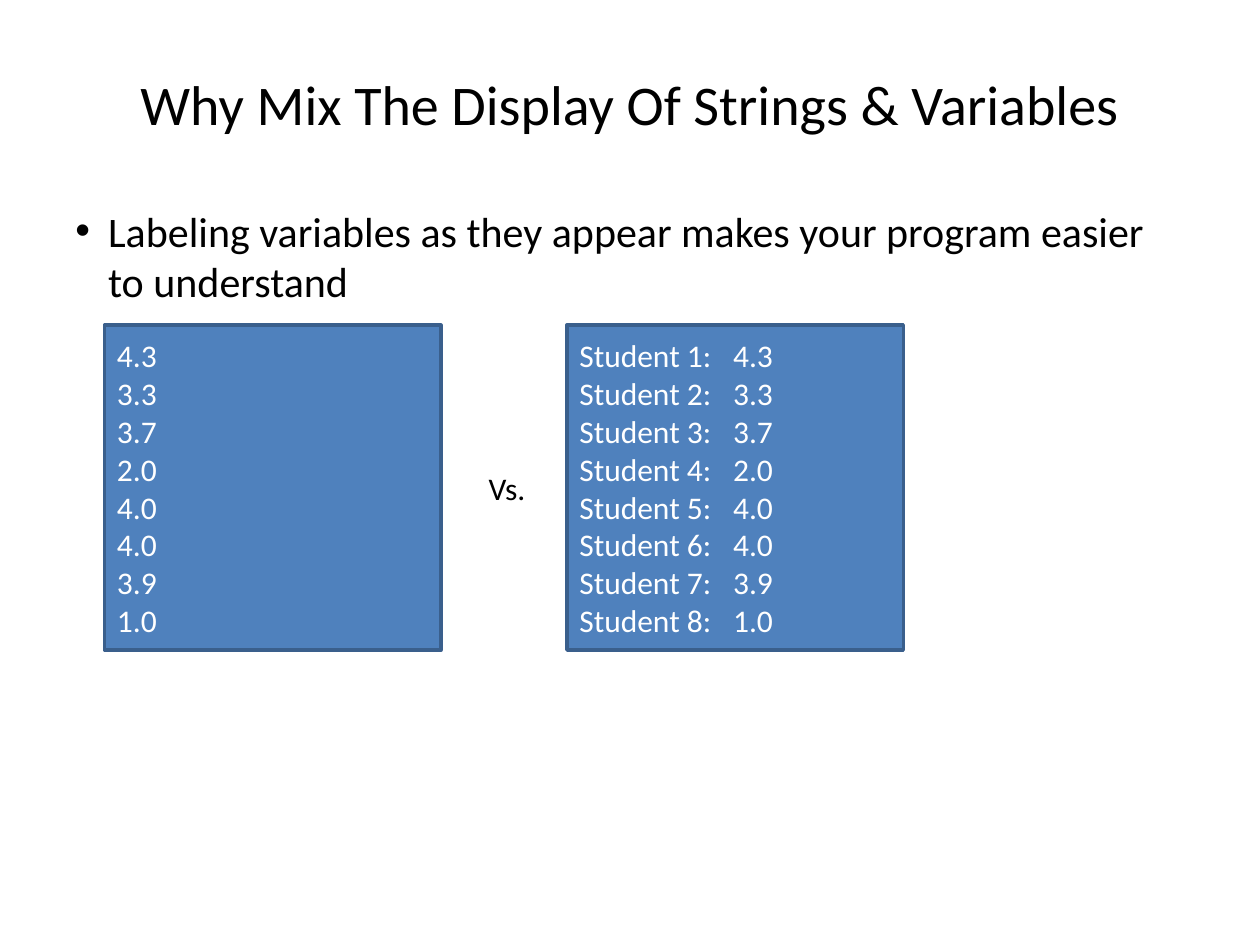
from dataclasses import dataclass

from lxml import etree
from pptx import Presentation
from pptx import util as u
from pptx.dml import color
from pptx.enum import shapes, text
from pptx.oxml import ns


@dataclass(frozen=True)
class Theme:
    font: str = "Calibri"
    ink: str = "000000"
    pale: str = "FFFFFF"
    fill: str = "4F81BD"
    edge: str = "3A5F8C"
    head: int = 32
    body: int = 24
    small: int = 18


class Deck:
    def __init__(self, theme):
        self.theme = theme
        self.prs = Presentation()
        self.prs.slide_width = u.Inches(10)
        self.prs.slide_height = u.Inches(7.5)
        self.slide = self.prs.slides.add_slide(self.prs.slide_layouts[6])

    def rgb(self, code):
        return color.RGBColor.from_string(code)

    def put(self, frame, lines, size, ink, align=text.PP_ALIGN.LEFT):
        frame.word_wrap = True
        frame.text = "\n".join(lines)
        for par in frame.paragraphs:
            par.alignment = align
            par.font.name = self.theme.font
            par.font.size = u.Pt(size)
            par.font.color.rgb = self.rgb(ink)

    def label(self, area, line, size, align=text.PP_ALIGN.LEFT):
        box = self.slide.shapes.add_textbox(*map(u.Inches, area))
        self.put(box.text_frame, [line], size, self.theme.ink, align)
        return box.text_frame

    def title(self, area, line):
        frame = self.label(area, line, self.theme.head, text.PP_ALIGN.CENTER)
        frame.vertical_anchor = text.MSO_ANCHOR.MIDDLE

    def bullet(self, area, line):
        par = self.label(area, line, self.theme.body).paragraphs[0]
        par.space_before = u.Pt(4.8)
        props = par._p.get_or_add_pPr()
        props.set("marL", str(u.Inches(0.26)))
        props.set("indent", str(-u.Inches(0.26)))
        font = etree.Element(ns.qn("a:buFont"), typeface="Arial")
        mark = etree.Element(ns.qn("a:buChar"), char="•")
        spot = props.index(props.find(ns.qn("a:defRPr")))
        props[spot:spot] = [font, mark]

    def note(self, area, line):
        frame = self.label(area, line, self.theme.small)
        frame.auto_size = text.MSO_AUTO_SIZE.SHAPE_TO_FIT_TEXT

    def panel(self, area, lines, tab=None):
        box = self.slide.shapes.add_shape(
            shapes.MSO_SHAPE.RECTANGLE, *map(u.Inches, area))
        box.shadow.inherit = False
        box.fill.solid()
        box.fill.fore_color.rgb = self.rgb(self.theme.fill)
        box.line.color.rgb = self.rgb(self.theme.edge)
        box.line.width = u.Pt(2)
        frame = box.text_frame
        frame.vertical_anchor = text.MSO_ANCHOR.MIDDLE
        self.put(frame, lines, self.theme.small, self.theme.pale)
        if tab:
            for par in frame.paragraphs:
                self.stop(par, tab)

    def stop(self, par, tab):
        props = par._p.get_or_add_pPr()
        tabs = etree.Element(ns.qn("a:tabLst"))
        etree.SubElement(tabs, ns.qn("a:tab"), pos=str(u.Inches(tab)), algn="l")
        props.find(ns.qn("a:defRPr")).addprevious(tabs)


def main():
    grades = ["4.3", "3.3", "3.7", "2.0", "4.0", "4.0", "3.9", "1.0"]
    named = [f"Student {n}:\t{grade}" for n, grade in enumerate(grades, 1)]
    top, wide, high = 2.58, 2.67, 2.58
    deck = Deck(Theme())
    deck.title((0.5, 0.3, 9, 1.03), "Why Mix The Display Of Strings & Variables")
    deck.bullet((0.5, 1.58, 9, 0.5),
                "Labeling variables as they appear makes your program "
                "easier to understand")
    deck.panel((0.83, top, wide, high), grades)
    deck.note((3.78, 3.67, 0.5, 0.4), "Vs.")
    deck.panel((4.5, top, wide, high), named, tab=1.22)
    deck.prs.save("out.pptx")


if __name__ == "__main__":
    main()
